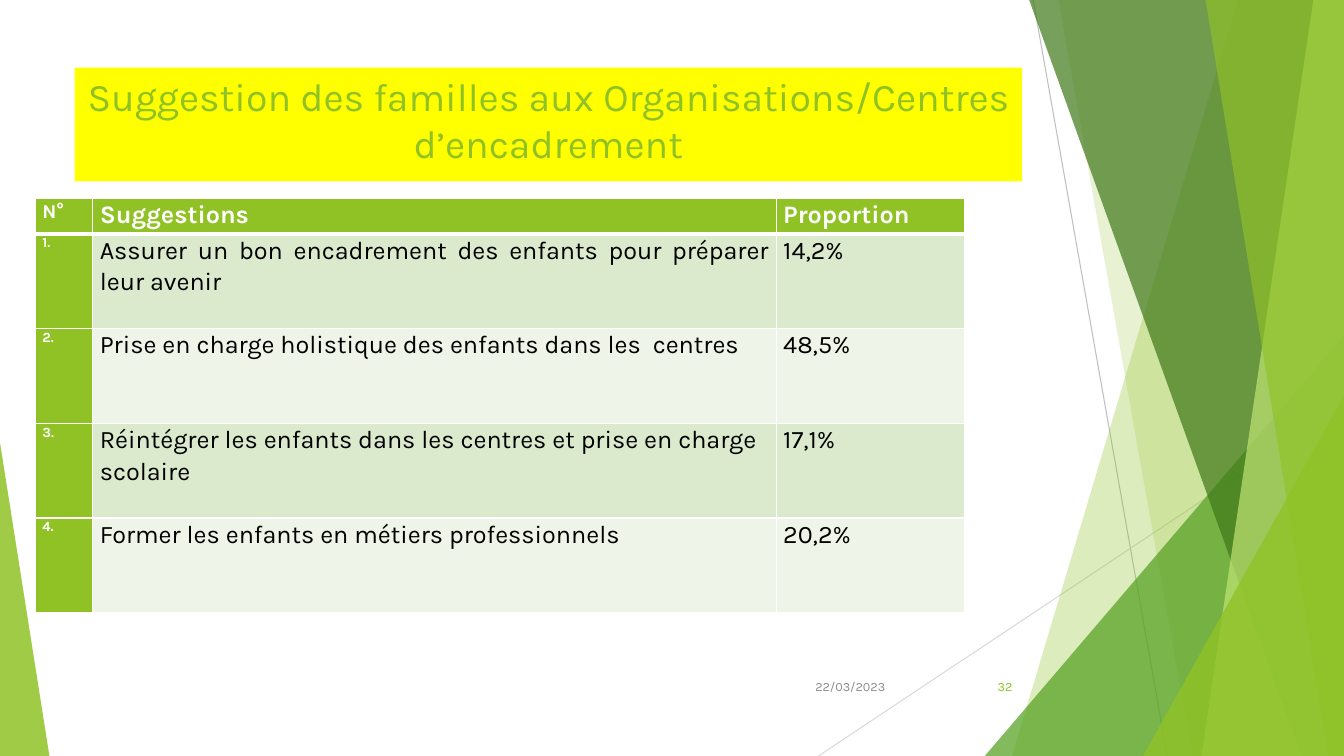
from lxml.etree import SubElement
from pptx import Presentation
from pptx.dml.color import RGBColor
from pptx.enum.shapes import MSO_CONNECTOR, MSO_SHAPE
from pptx.enum.text import MSO_ANCHOR, PP_ALIGN
from pptx.oxml.ns import qn
from pptx.util import Inches, Pt

WIDE, HIGH = Inches(13.333), Inches(7.5)
FONT = "Karla"
HUES = {
    "lime": "90C226", "leaf": "54A021", "moss": "3F7819", "pale": "C0E474",
    "yellow": "FFFF00", "white": "FFFFFF", "black": "000000",
    "gray": "8C8C8C", "line": "BFBFBF", "faint": "D9D9D9",
    "odd": "DBE9CD", "even": "EEF4E8",
}

# Kind, hue, opacity, then top and foot of a blade, or left and top of a ramp
FAN = [
    ("blade", "lime", 30, 80.25, 38.25),
    ("blade", "lime", 20, 46.88, 71.81),
    ("ramp", "leaf", 72, 33.19, 44.4),
    ("blade", "moss", 70, 41.44, 92.06),
    ("blade", "pale", 70, 94.31, 73.5),
    ("blade", "lime", 65, 74.25, 97.12),
    ("ramp", "lime", 80, 62.63, 52.4),
]
HEADS = ["N°", "Suggestions", "Proportion"]
ROWS = [
    ("Assurer un bon encadrement des enfants pour préparer leur avenir", "14,2%"),
    ("Prise en charge holistique des enfants dans les  centres", "48,5%"),
    ("Réintégrer les enfants dans les centres et prise en charge scolaire", "17,1%"),
    ("Former les enfants en métiers professionnels", "20,2%"),
]


def rgb(hue):
    return RGBColor.from_string(HUES[hue])


def place(share):
    """Turn percent of the slide into lengths."""
    x, y, w, h = share
    return [int(n * side / 100) for n, side in
            ((x, WIDE), (y, HIGH), (w, WIDE), (h, HIGH))]


def inner(box, x, y):
    """Turn percent of a box into a point on the slide."""
    left, top, wide, high = place(box)
    return int(left + wide * x / 100), int(top + high * y / 100)


def paint(shape, hue, alpha=100):
    shape.shadow.inherit = False
    shape.line.fill.background()
    shape.fill.solid()
    shape.fill.fore_color.rgb = rgb(hue)
    if alpha < 100:
        tint = shape.element.spPr.find(".//" + qn("a:srgbClr"))
        SubElement(tint, qn("a:alpha")).set("val", str(alpha * 1000))


def write(frame, text, size, hue, align=None, bold=False):
    frame.word_wrap = True
    par = frame.paragraphs[0]
    par.alignment = align
    run = par.add_run()
    run.text = text
    run.font.name, run.font.size, run.font.bold = FONT, Pt(size), bold
    run.font.color.rgb = rgb(hue)
    return par


def add_line(slide, box, start, end, hue):
    line = slide.shapes.add_connector(
        MSO_CONNECTOR.STRAIGHT, *inner(box, *start), *inner(box, *end))
    line.line.color.rgb = rgb(hue)
    line.line.width = Pt(0.75)
    SubElement(line.element.spPr, qn("a:effectLst"))


def add_ramp(slide, box, peak, hue, alpha):
    ramp = slide.shapes.add_shape(MSO_SHAPE.ISOSCELES_TRIANGLE, *place(box))
    ramp.adjustments[0] = peak
    paint(ramp, hue, alpha)


def add_fan(slide, box):
    # Thin lines behind the fan
    add_line(slide, box, (42.19, 0), (67.13, 100), "line")
    add_line(slide, box, (100, 53.73), (2.25, 100), "faint")
    # Overlapping blades and ramps, all reaching the right edge
    x, y, w, h = box
    for kind, hue, alpha, a, b in FAN:
        if kind == "ramp":
            part = (x + w * a / 100, y + h * b / 100,
                    w * (100 - a) / 100, h * (100 - b) / 100)
            add_ramp(slide, part, 1, hue, alpha)
        else:
            pen = slide.shapes.build_freeform(*inner(box, a, 0), scale=1)
            pen.add_line_segments(
                [inner(box, *p) for p in ((100, 0), (100, 100), (b, 100))])
            paint(pen.convert_to_shape(), hue, alpha)


def add_title(slide, box):
    banner = slide.shapes.add_shape(MSO_SHAPE.RECTANGLE, *place(box))
    paint(banner, "yellow")
    banner.text_frame.vertical_anchor = MSO_ANCHOR.TOP
    write(banner.text_frame,
          "Suggestion des familles aux Organisations/Centres d’encadrement",
          28, "lime", PP_ALIGN.CENTER)


def set_edges(cell, row):
    props = cell._tc.get_or_add_tcPr()
    for i, side in enumerate("LRTB"):
        thick = (row, side) in ((0, "B"), (1, "T"))
        edge = SubElement(props, qn("a:ln" + side))
        edge.set("w", str(Pt(3 if thick else 1)))
        fill = SubElement(edge, qn("a:solidFill"))
        SubElement(fill, qn("a:srgbClr")).set("val", HUES["white"])
        props.insert(i, edge)


def add_grid(slide, box):
    data = [HEADS] + [(f"{i}.", *row) for i, row in enumerate(ROWS, 1)]
    x, y, wide, high = place(box)
    table = slide.shapes.add_table(
        len(data), len(HEADS), x, y, wide, high).table
    for col, share in zip(table.columns, (6.18, 73.54, 20.28)):
        col.width = int(wide * share / 100)
    for r, texts in enumerate(data):
        table.rows[r].height = int(high * (22.87 if r else 8.52) / 100)
        for c, text in enumerate(texts):
            cell = table.cell(r, c)
            cell.margin_left = cell.margin_right = Inches(0.07)
            cell.margin_top = cell.margin_bottom = 0
            # Header row and number column are lime with bold white text
            key = r == 0 or c == 0
            band = "odd" if r % 2 else "even"
            cell.fill.solid()
            cell.fill.fore_color.rgb = rgb("lime" if key else band)
            size = 18 if c else 10 if r else 14
            align = PP_ALIGN.JUSTIFY if (r, c) == (1, 1) else PP_ALIGN.LEFT
            par = write(cell.text_frame, text, size,
                        "white" if key else "black", align, key)
            par.line_spacing = 1.07
            set_edges(cell, r)


def add_note(slide, box, text, hue):
    frame = slide.shapes.add_textbox(*place(box)).text_frame
    frame.vertical_anchor = MSO_ANCHOR.MIDDLE
    write(frame, text, 9, hue, PP_ALIGN.RIGHT)


def main():
    deck = Presentation()
    deck.slide_width, deck.slide_height = WIDE, HIGH
    slide = deck.slides.add_slide(deck.slide_layouts[6])
    # Backdrop
    add_fan(slide, (60, 0, 40, 100))
    add_ramp(slide, (0, 58.53, 3.68, 41.47), 0, "lime", 85)
    # Content
    add_title(slide, (5.55, 8.93, 70.5, 15.07))
    add_grid(slide, (2.63, 26.27, 69.15, 54.8))
    # Footer
    add_note(slide, (70.43, 88.13, 5.63, 5.33), "32", "lime")
    add_note(slide, (59.1, 88.13, 7.5, 5.33), "22/03/2023", "gray")
    deck.save("out.pptx")


if __name__ == "__main__":
    main()
